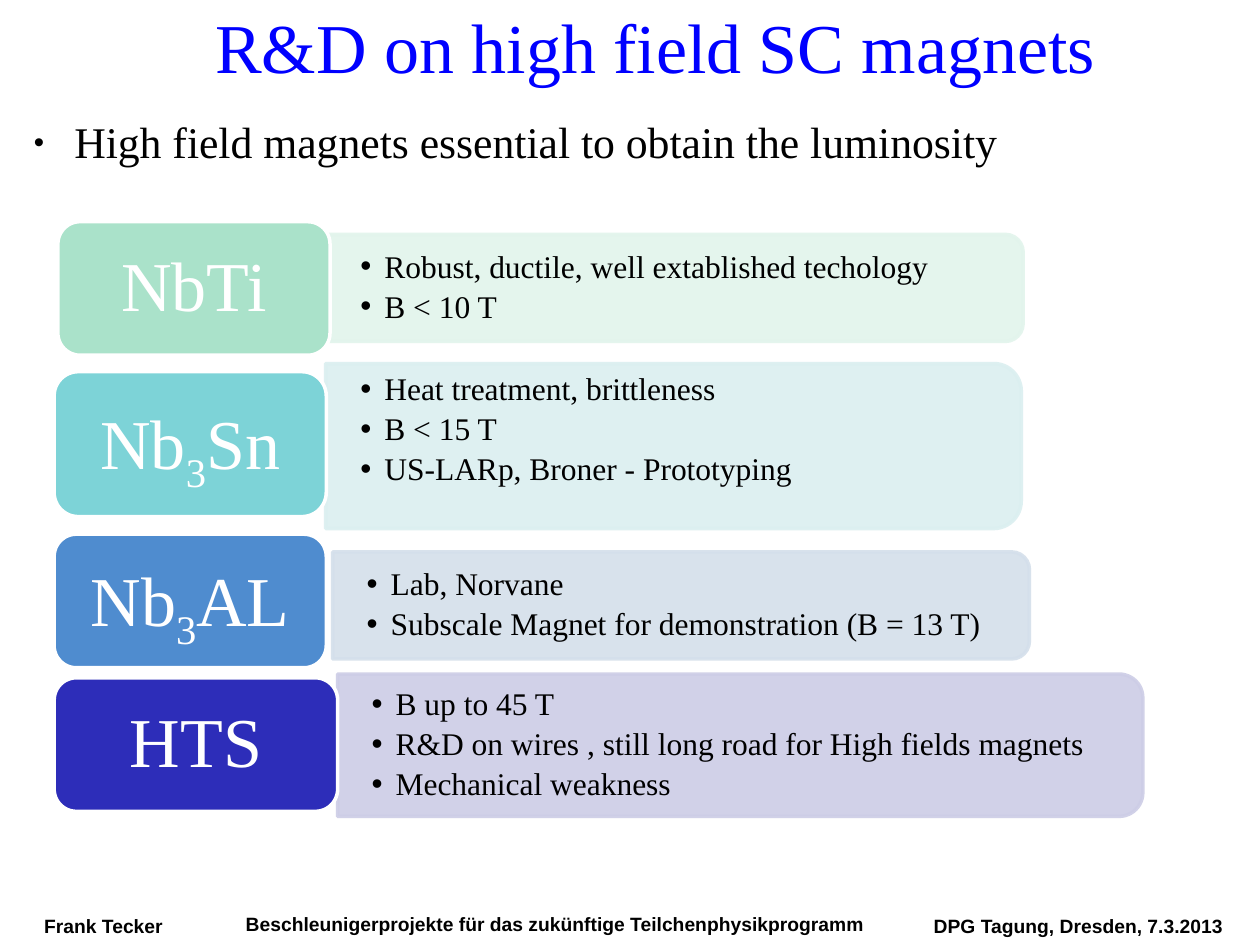
"""Build a slide comparing superconducting materials for high field magnets."""
from dataclasses import dataclass

from lxml import etree
from pptx import Presentation
from pptx.dml.color import RGBColor
from pptx.enum.shapes import MSO_SHAPE
from pptx.enum.text import MSO_ANCHOR, PP_ALIGN
from pptx.oxml.ns import qn
from pptx.util import Emu, Pt

ROUNDED = MSO_SHAPE.ROUNDED_RECTANGLE
TWO_ROUNDED = MSO_SHAPE.ROUND_2_SAME_RECTANGLE
TOP, MIDDLE = MSO_ANCHOR.TOP, MSO_ANCHOR.MIDDLE
LEFT, CENTER = PP_ALIGN.LEFT, PP_ALIGN.CENTER
EMU_PER_PX = 9144
CORNER_TRIM = 0.05


@dataclass(frozen=True)
class Theme:
    serif: str = "Times New Roman"
    sans: str = "Arial"
    title: str = "0000FF"
    ink: str = "000000"
    paper: str = "FFFFFF"
    display_size: int = 40
    headline_size: int = 25
    detail_size: int = 18
    footer_size: int = 11
    outline: int = 2
    panel_opacity: int = 90


@dataclass(frozen=True)
class Box:
    left: int
    top: int
    width: int
    height: int

    def emu(self) -> list[Emu]:
        """Return the four lengths in EMU."""
        return [px(n) for n in (self.left, self.top, self.width, self.height)]


@dataclass(frozen=True)
class Style:
    size: int
    color: str
    font: str
    bold: bool = False
    align: PP_ALIGN = LEFT
    spacing: float = 0.93
    after: float = 0


@dataclass(frozen=True)
class Material:
    formula: tuple[str, ...]
    tile: Box
    tile_color: str
    panel: Box
    panel_color: str
    details: tuple[str, ...]
    space_below: int = 0


@dataclass(frozen=True)
class Footer:
    text: str
    box: Box


THEME = Theme()
TITLE = Style(THEME.display_size, THEME.title, THEME.serif, align=CENTER)
HEADLINE = Style(THEME.headline_size, THEME.ink, THEME.serif)
FORMULA = Style(THEME.display_size, THEME.paper, THEME.serif, align=CENTER, spacing=0.9)
DETAIL = Style(THEME.detail_size, THEME.ink, THEME.serif, spacing=0.9, after=3.4)
FOOTER = Style(THEME.footer_size, THEME.ink, THEME.sans, bold=True)

MATERIALS = (
    Material(("NbTi",), Box(46, 176, 216, 106), "AAE2CA", Box(259, 186, 553, 85), "E2F4EC",
             ("Robust, ductile, well extablished techology", "B < 10 T")),
    Material(("Nb", "3", "Sn"), Box(43, 295, 216, 115), "7DD3D7", Box(259, 288, 552, 131), "DBEFF0",
             ("Heat treatment, brittleness", "B < 15 T", "US-LARp, Broner - Prototyping"), 24),
    Material(("Nb", "3", "AL"), Box(43, 424, 216, 106), "4F8CCF", Box(264, 438, 553, 85), "D4DFEB",
             ("Lab, Norvane", "Subscale Magnet for demonstration (B = 13 T)")),
    Material(("HTS",), Box(43, 538, 225, 106), "2D2DB9", Box(268, 535, 639, 113), "CDCDE6",
             ("B up to 45 T", "R&D on wires , still long road for High fields magnets",
              "Mechanical weakness")),
)
FOOTERS = (
    Footer("Frank Tecker", Box(35, 727, 95, 17)),
    Footer("Beschleunigerprojekte für das zukünftige Teilchenphysikprogramm", Box(195, 726, 495, 17)),
    Footer("DPG Tagung, Dresden, 7.3.2013", Box(741, 727, 231, 17)),
)


def px(length: int) -> Emu:
    """Convert pixels to EMU."""
    return Emu(length * EMU_PER_PX)


def set_frame(frame, anchor: MSO_ANCHOR, side: int = 0, edge: int = 0, wrap: bool = True) -> None:
    """Set anchor, wrapping and insets of a text frame."""
    frame.word_wrap = wrap
    frame.vertical_anchor = anchor
    frame.margin_left = frame.margin_right = px(side)
    frame.margin_top = frame.margin_bottom = px(edge)


def format_paragraph(paragraph, style: Style) -> None:
    """Apply a style to a paragraph and its runs."""
    paragraph.alignment = style.align
    paragraph.line_spacing = style.spacing
    paragraph.space_after = Pt(style.after)
    for run in paragraph.runs:
        run.font.size = Pt(style.size)
        run.font.name = style.font
        run.font.bold = style.bold
        run.font.color.rgb = RGBColor.from_string(style.color)


def add_bullet(paragraph, margin: int, hanging: int, percent: int = 100) -> None:
    """Give a paragraph a hanging bullet."""
    properties = paragraph._p.get_or_add_pPr()
    properties.set("marL", str(px(margin)))
    properties.set("indent", str(-px(hanging)))
    etree.SubElement(properties, qn("a:buSzPct"), val=str(percent * 1000))
    etree.SubElement(properties, qn("a:buFont"), typeface=THEME.sans)
    etree.SubElement(properties, qn("a:buChar"), char="•")


def add_text(slide, box: Box, text: str, style: Style, anchor: MSO_ANCHOR = MIDDLE, wrap: bool = True):
    """Add a one-paragraph text box and return its paragraph."""
    frame = slide.shapes.add_textbox(*box.emu()).text_frame
    set_frame(frame, anchor, wrap=wrap)
    frame.text = text
    format_paragraph(frame.paragraphs[0], style)
    return frame.paragraphs[0]


def add_filled(slide, kind: MSO_SHAPE, box: Box, fill: str, line: str):
    """Add a preset shape with a solid fill and outline."""
    shape = slide.shapes.add_shape(kind, *box.emu())
    shape.shadow.inherit = False
    shape.fill.solid()
    shape.fill.fore_color.rgb = RGBColor.from_string(fill)
    shape.line.color.rgb = RGBColor.from_string(line)
    shape.line.width = Pt(THEME.outline)
    return shape


def add_panel(slide, material: Material) -> None:
    """Add the translucent panel, turned so its round corners face right."""
    panel = material.panel
    shift = (panel.width - panel.height) // 2
    upright = Box(panel.left + shift, panel.top - shift, panel.height, panel.width)
    shape = add_filled(slide, TWO_ROUNDED, upright, material.panel_color, material.panel_color)
    shape.rotation = 90
    for color in shape._element.spPr.iter(qn("a:srgbClr")):
        etree.SubElement(color, qn("a:alpha"), val=str(THEME.panel_opacity * 1000))


def add_details(slide, material: Material) -> None:
    """Add the bulleted text over a panel."""
    panel = material.panel
    trim = round(panel.height * CORNER_TRIM)
    height = panel.height - 2 * trim - material.space_below
    box = Box(panel.left, panel.top + trim, panel.width - trim, height)
    frame = slide.shapes.add_textbox(*box.emu()).text_frame
    set_frame(frame, MIDDLE, side=27, edge=14)
    frame.text = "\n".join(material.details)
    for paragraph in frame.paragraphs:
        add_bullet(paragraph, 19, 19)
        format_paragraph(paragraph, DETAIL)


def add_tile(slide, material: Material) -> None:
    """Add the coloured tile with its formula."""
    shape = add_filled(slide, ROUNDED, material.tile, material.tile_color, THEME.paper)
    set_frame(shape.text_frame, MIDDLE, side=23, edge=13)
    paragraph = shape.text_frame.paragraphs[0]
    for part in material.formula:
        run = paragraph.add_run()
        run.text = part
        if part.isdigit():
            run._r.get_or_add_rPr().set("baseline", "-25000")
    format_paragraph(paragraph, FORMULA)


def main() -> None:
    """Build and save the slide."""
    presentation = Presentation()
    presentation.slide_width, presentation.slide_height = px(1000), px(750)
    slide = presentation.slides.add_slide(presentation.slide_layouts[6])
    for footer in FOOTERS:
        add_text(slide, footer.box, footer.text, FOOTER, wrap=False)
    for material in MATERIALS:
        add_panel(slide, material)
        add_details(slide, material)
        add_tile(slide, material)
    add_text(slide, Box(136, 12, 768, 56), "R&D on high field SC magnets", TITLE)
    headline = add_text(slide, Box(16, 95, 970, 46),
                        "High field magnets essential to obtain the luminosity", HEADLINE, TOP)
    add_bullet(headline, 43, 32, 67)
    presentation.save("out.pptx")


if __name__ == "__main__":
    main()
